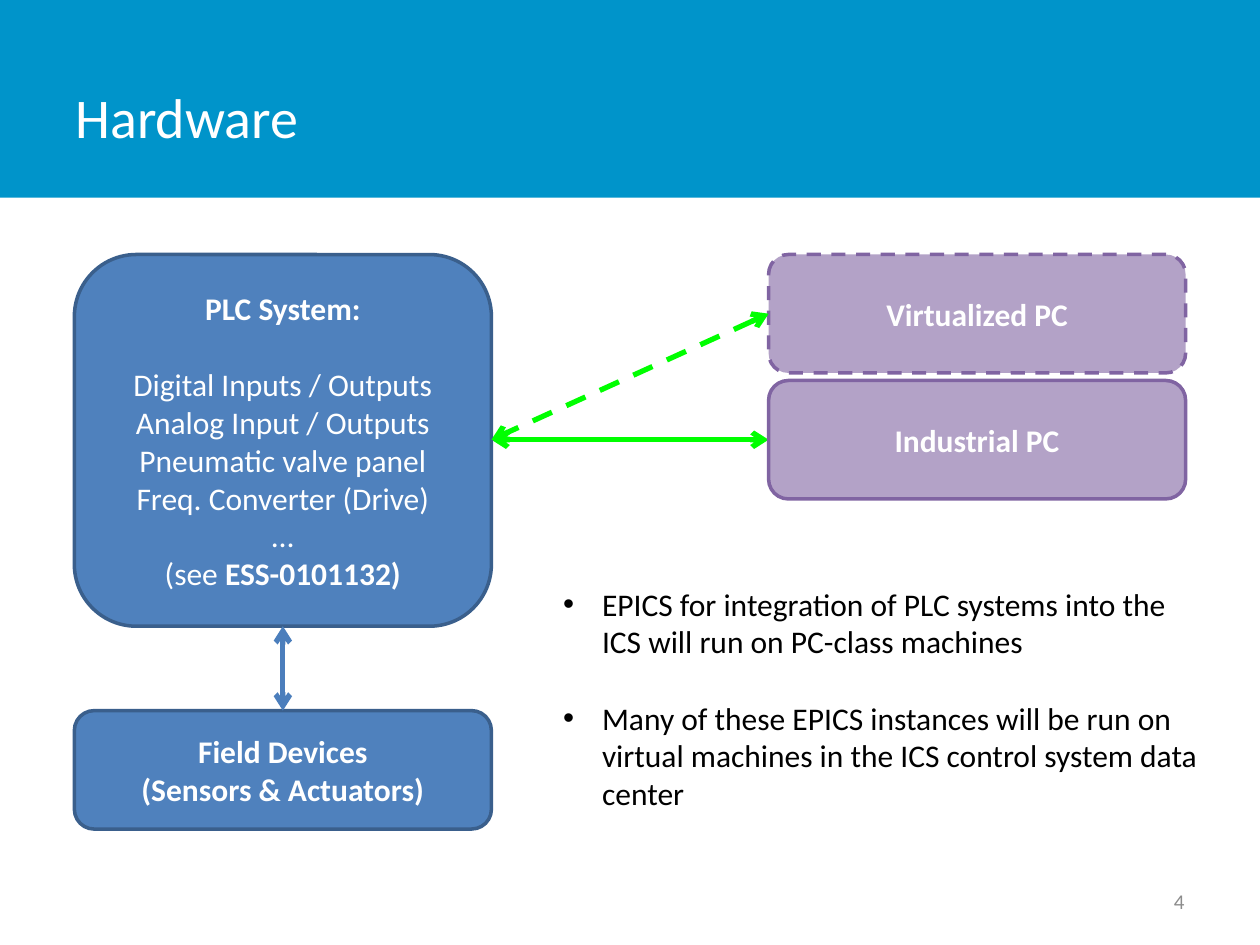
import pptx
import pptx.util
import pptx.dml.color
import pptx.enum.dml
import pptx.enum.shapes
import pptx.enum.text
import pptx.oxml
import pptx.oxml.ns

COLS, ROWS = 100, 75
CELL = pptx.util.Inches(0.1)
ALIGN = pptx.enum.text.PP_ALIGN
ANCHOR = pptx.enum.text.MSO_ANCHOR
KIND = pptx.enum.shapes.MSO_SHAPE
LINE_GAP = 22


def hue(code):
    return pptx.dml.color.RGBColor.from_string(code)


def cells(*counts):
    return [round(count * CELL) for count in counts]


def add_tag(parent, tag, **attrs):
    node = pptx.oxml.parse_xml(f"<a:{tag} {pptx.oxml.ns.nsdecls('a')}/>")
    for name, value in attrs.items():
        node.set(name, value)
    parent.append(node)


def write(frame, paras, size=18, color="FFFFFF", align=ALIGN.LEFT,
          bullet=False, gaps=(), anchor=ANCHOR.MIDDLE):
    """Fill a frame; each * in a paragraph switches bold, gaps lists those set apart."""
    frame.word_wrap = True
    frame.vertical_anchor = anchor
    for num, text in enumerate(paras):
        para = frame.paragraphs[0] if num == 0 else frame.add_paragraph()
        para.alignment = align
        if num in gaps:
            para.space_before = pptx.util.Pt(LINE_GAP)
        if bullet:
            props = para._p.get_or_add_pPr()
            indent = pptx.util.Inches(0.31)
            props.set("marL", str(indent))
            props.set("indent", str(-indent))
            add_tag(props, "buFont", typeface="Arial")
            add_tag(props, "buChar", char="•")
        for part, piece in enumerate(text.split("*")):
            if piece:
                run = para.add_run()
                run.text = piece
                run.font.name = "Calibri"
                run.font.size = pptx.util.Pt(size)
                run.font.bold = part % 2 == 1
                run.font.color.rgb = hue(color)


class Page:
    """Draws on one slide; all lengths are grid columns and rows."""

    def __init__(self, slide):
        self.shapes = slide.shapes

    def stroke(self, line, color, width, dash):
        line.color.rgb = hue(color)
        line.width = pptx.util.Pt(width)
        if dash:
            line.dash_style = pptx.enum.dml.MSO_LINE.DASH

    def band(self, height, fill):
        shape = self.shapes.add_shape(KIND.RECTANGLE, *cells(0, 0, COLS, height))
        shape.shadow.inherit = False
        shape.fill.solid()
        shape.fill.fore_color.rgb = hue(fill)
        shape.line.fill.background()

    def box(self, place, paras, fill, edge, dash=False, gaps=()):
        shape = self.shapes.add_shape(KIND.ROUNDED_RECTANGLE, *cells(*place))
        shape.shadow.inherit = False
        shape.fill.solid()
        shape.fill.fore_color.rgb = hue(fill)
        self.stroke(shape.line, edge, 2, dash)
        write(shape.text_frame, paras, align=ALIGN.CENTER, gaps=gaps)

    def text(self, place, paras, grow=False, **style):
        frame = self.shapes.add_textbox(*cells(*place)).text_frame
        write(frame, paras, **style)
        if grow:
            frame.auto_size = pptx.enum.text.MSO_AUTO_SIZE.SHAPE_TO_FIT_TEXT

    def arrow(self, start, end, color, dash=False):
        """Line with an open head at both ends."""
        link = self.shapes.add_connector(
            pptx.enum.shapes.MSO_CONNECTOR.STRAIGHT, *cells(*start, *end))
        self.stroke(link.line, color, 3, dash)
        props = link._element.spPr
        for tag in ("headEnd", "tailEnd"):
            add_tag(props.find(pptx.oxml.ns.qn("a:ln")), tag, type="arrow")
        add_tag(props, "effectLst")


def main():
    deck = pptx.Presentation()
    deck.slide_width, deck.slide_height = cells(COLS, ROWS)
    page = Page(deck.slides.add_slide(deck.slide_layouts[6]))

    left, right, wide, high = 5.9, 61, 33.1, 9.4
    top, plc_high, field_top = 20.2, 29.5, 56.4
    pc_step = 10
    edge, mid = left + wide, left + wide / 2
    pc_mid = top + high / 2
    link_row = pc_mid + pc_step
    blue = {"fill": "4F81BD", "edge": "3A5F8C"}
    purple = {"fill": "B3A2C7", "edge": "8064A2"}
    green = "00FF00"

    page.band(15.7, "0094CA")
    page.text((5, 3, 78.1, 12.5), ["Hardware"], size=32)
    page.text((71.7, 69.5, 23.3, 4), ["4"], size=12, color="8C8C8C",
              align=ALIGN.RIGHT)

    page.arrow((right, link_row), (edge, link_row), green)
    page.box((left, field_top, wide, high),
             ["*Field Devices", "*(Sensors & Actuators)"], **blue)
    page.box((left, top, wide, plc_high),
             ["*PLC System:", "Digital Inputs / Outputs",
              "Analog Input / Outputs", "Pneumatic valve panel",
              "Freq. Converter (Drive)", "…", "(see *ESS-0101132)"],
             gaps=[1], **blue)
    page.arrow((mid, field_top), (mid, top + plc_high), "4B7EBC")

    page.box((right, top + pc_step, wide, high), ["*Industrial PC"], **purple)
    page.box((right, top, wide, high), ["*Virtualized PC"], dash=True, **purple)
    page.arrow((right, pc_mid), (edge, link_row), green, dash=True)

    page.text((43.7, 45.9, 52.8, 19.2),
              ["EPICS for integration of PLC systems into the ICS will run on "
               "PC-class machines",
               "Many of these EPICS instances will be run on virtual machines "
               "in the ICS control system data center"],
              grow=True, color="000000", bullet=True, gaps=[1],
              anchor=ANCHOR.TOP)

    deck.save("out.pptx")


if __name__ == "__main__":
    main()
